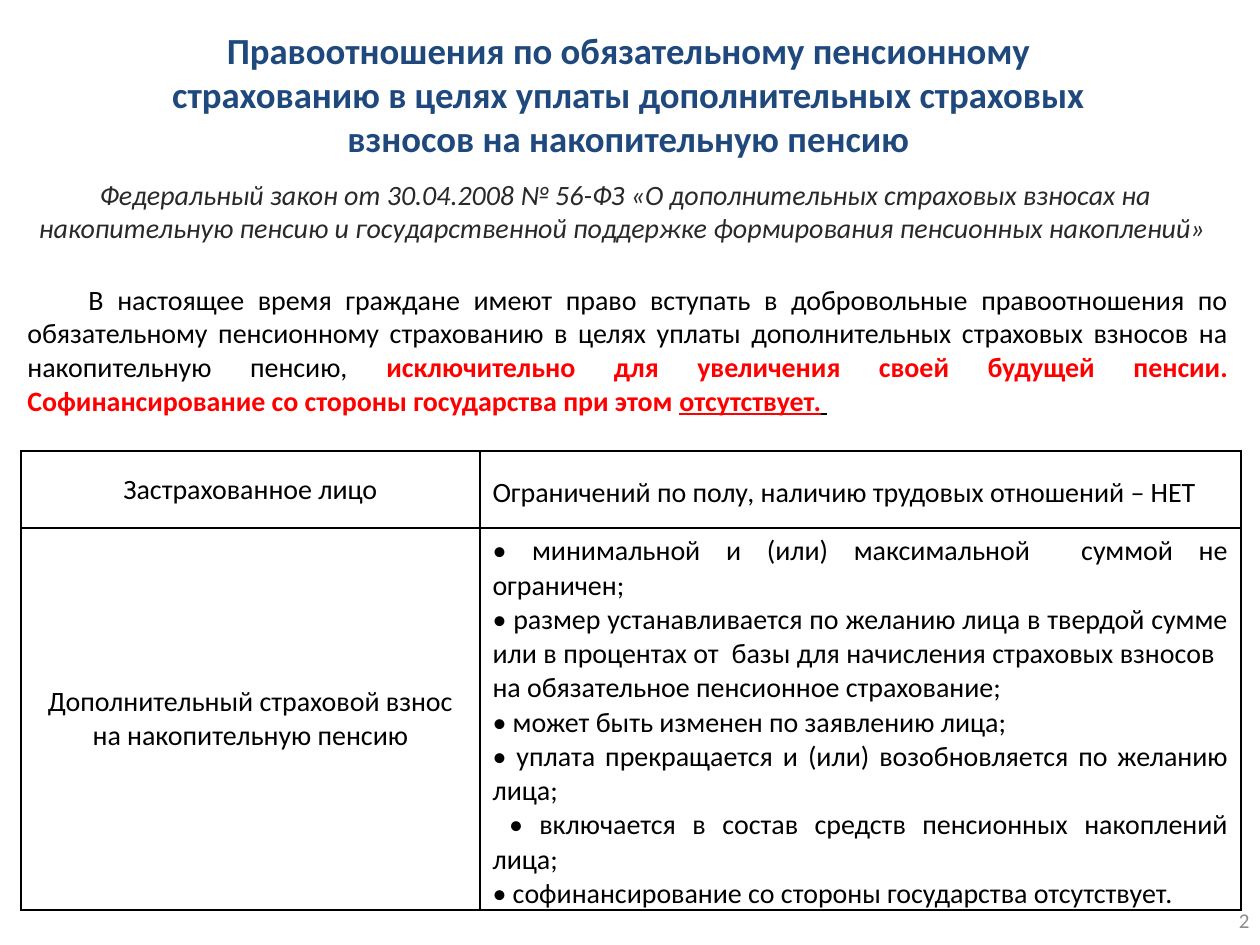
from pptx import Presentation
from pptx.dml.color import RGBColor
from pptx.enum.text import MSO_ANCHOR, MSO_AUTO_SIZE, PP_ALIGN
from pptx.oxml import parse_xml
from pptx.oxml.ns import nsdecls
from pptx.util import Emu, Pt

PX = 914400 / 126
COLORS = {"title": "1F497D", "text": "000000", "accent": "FF0000",
          "law": "292929", "number": "8C8C8C"}


def px(n):
    return Emu(round(n * PX))


def add_run(p, text, size=16, color="text", bold=False, italic=False, underline=False):
    r = p.add_run()
    r.text = text
    f = r.font
    f.name, f.size = "Calibri", Pt(size)
    f.bold, f.italic, f.underline = bold, italic, underline
    f.color.rgb = RGBColor.from_string(COLORS[color])


prs = Presentation()
prs.slide_width, prs.slide_height = px(1260), px(945)
s = prs.slides.add_slide(prs.slide_layouts[6])

boxes = [
    ((137, 26, 983, 135), MSO_ANCHOR.MIDDLE, PP_ALIGN.CENTER, 0, False, [
        ("Правоотношения по обязательному пенсионному страхованию в целях уплаты "
         "дополнительных страховых взносов на накопительную пенсию",
         dict(size=21, color="title", bold=True))]),
    ((25, 171, 1201, 81), MSO_ANCHOR.TOP, PP_ALIGN.CENTER, 0, True, [
        ("Федеральный закон от 30.04.2008 № 56-ФЗ «О дополнительных страховых взносах на "
         "накопительную пенсию и государственной поддержке формирования пенсионных накоплений» ",
         dict(color="law", italic=True))]),
    ((15, 276, 1226, 147), MSO_ANCHOR.MIDDLE, PP_ALIGN.JUSTIFY, 61, True, [
        ("В настоящее время граждане имеют право вступать в добровольные правоотношения по "
         "обязательному пенсионному страхованию в целях уплаты дополнительных страховых "
         "взносов на накопительную пенсию, ", {}),
        ("исключительно для увеличения своей будущей пенсии. Софинансирование со стороны "
         "государства при этом ", dict(color="accent", bold=True)),
        ("отсутствует.", dict(color="accent", bold=True, underline=True)),
        (" ", dict(underline=True))]),
    ((968, 895, 294, 50), MSO_ANCHOR.MIDDLE, PP_ALIGN.RIGHT, 0, False, [
        ("2", dict(size=12, color="number"))]),
]
for place, anchor, align, indent, grow, runs in boxes:
    tf = s.shapes.add_textbox(*map(px, place)).text_frame
    tf.word_wrap = True
    tf.vertical_anchor = anchor
    tf.auto_size = MSO_AUTO_SIZE.SHAPE_TO_FIT_TEXT if grow else MSO_AUTO_SIZE.NONE
    p = tf.paragraphs[0]
    p.alignment = align
    if indent:
        p._p.get_or_add_pPr().set("indent", str(px(indent)))
    for text, fmt in runs:
        add_run(p, text, **fmt)

rows = [
    [(["Застрахованное лицо"], PP_ALIGN.CENTER, MSO_ANCHOR.MIDDLE, 1),
     (["Ограничений по полу, наличию трудовых отношений – НЕТ"],
      PP_ALIGN.LEFT, MSO_ANCHOR.MIDDLE, 1.2)],
    [(["Дополнительный страховой взнос на накопительную пенсию"],
      PP_ALIGN.CENTER, MSO_ANCHOR.MIDDLE, 1),
     (["• минимальной и (или) максимальной  суммой не ограничен;",
       "• размер устанавливается по желанию лица в твердой сумме или в процентах от  базы "
       "для начисления страховых взносов   на обязательное пенсионное страхование;",
       "• может быть изменен по заявлению лица;",
       "• уплата прекращается и (или) возобновляется по желанию лица;",
       " • включается в состав средств пенсионных накоплений лица;",
       "• софинансирование со стороны государства отсутствует."],
      PP_ALIGN.JUSTIFY, MSO_ANCHOR.TOP, 1)],
]
table = s.shapes.add_table(2, 2, px(21), px(451), px(1220), px(449)).table
table.first_row = table.horz_banding = False
for col, width in zip(table.columns, (459, 761)):
    col.width = px(width)
for row, height in zip(table.rows, (77, 372)):
    row.height = px(height)

for i, row in enumerate(rows):
    for j, (lines, align, anchor, spacing) in enumerate(row):
        cell = table.cell(i, j)
        cell.fill.background()
        cell.vertical_anchor = anchor
        for n, side in enumerate(("lnL", "lnR", "lnT", "lnB")):
            cell._tc.get_or_add_tcPr().insert(n, parse_xml(
                f'<a:{side} {nsdecls("a")} w="{Pt(1)}"><a:solidFill>'
                f'<a:srgbClr val="{COLORS["text"]}"/></a:solidFill></a:{side}>'))
        tf = cell.text_frame
        for n, text in enumerate(lines):
            p = tf.add_paragraph() if n else tf.paragraphs[0]
            p.alignment = align
            p.line_spacing = spacing
            add_run(p, text)

prs.save("out.pptx")
